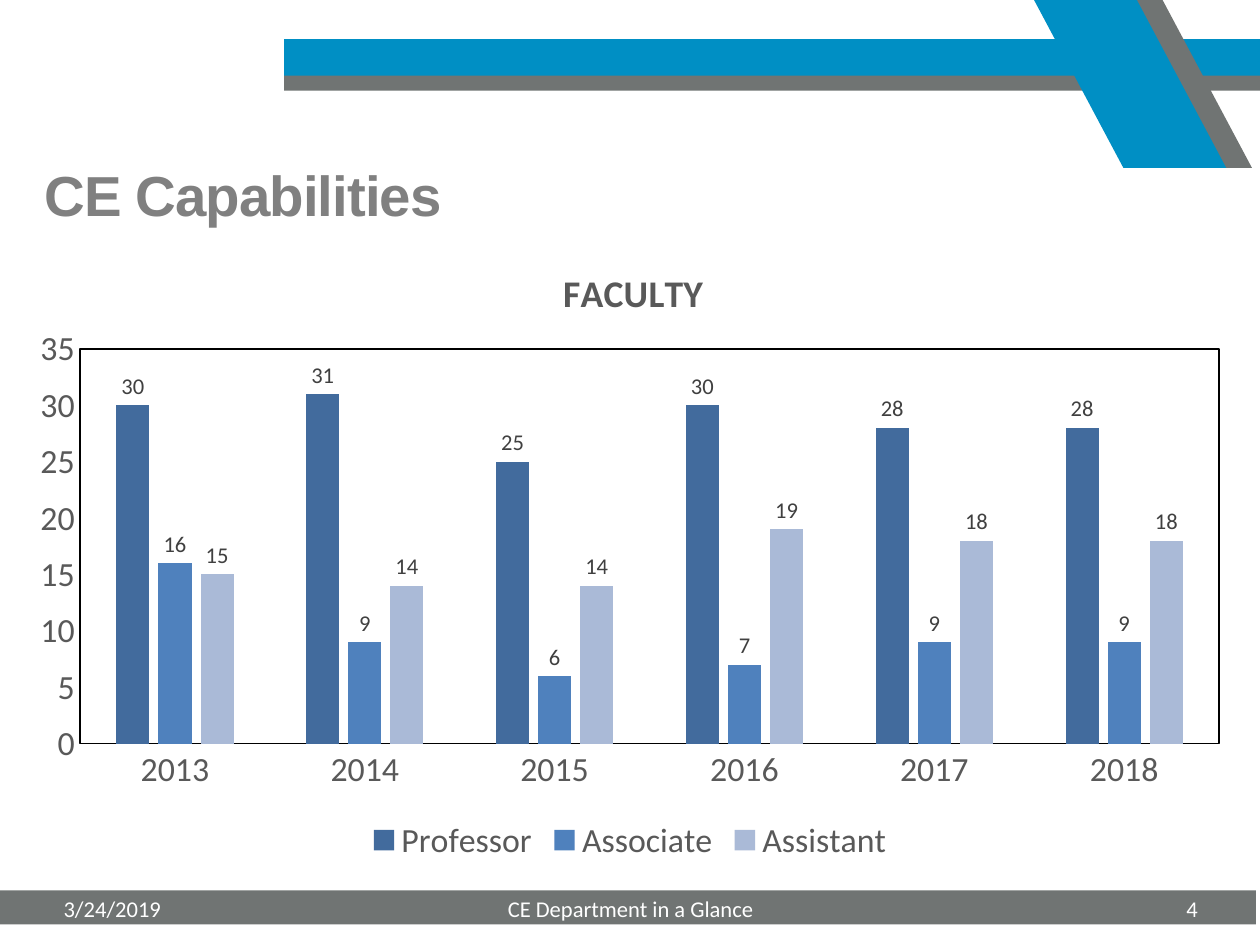
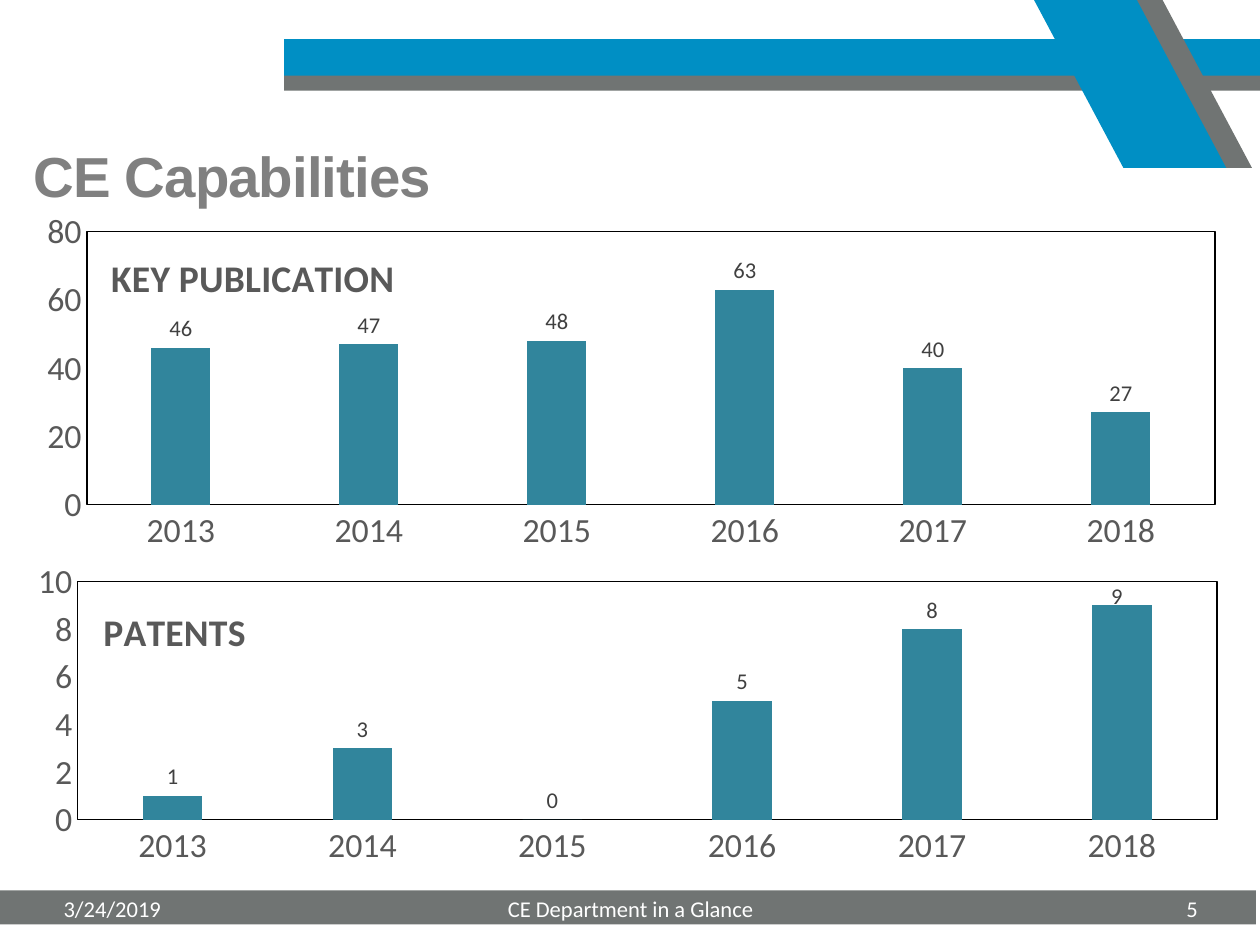
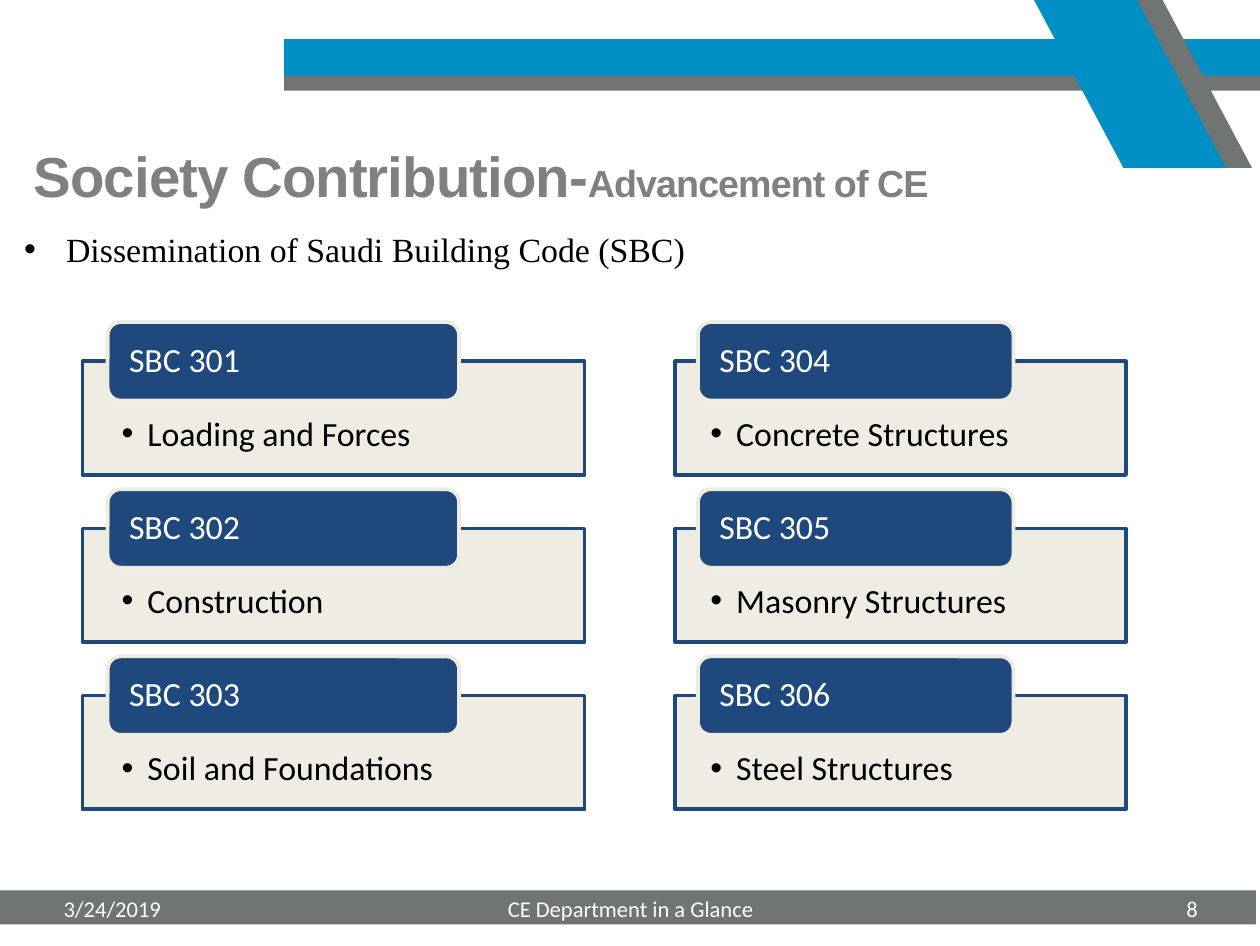
from lxml import etree
from pptx import Presentation
from pptx.chart.data import CategoryChartData
from pptx.dml.color import RGBColor
from pptx.enum.chart import XL_CHART_TYPE, XL_LABEL_POSITION, XL_LEGEND_POSITION, XL_TICK_MARK
from pptx.enum.shapes import MSO_SHAPE
from pptx.enum.text import MSO_ANCHOR, PP_ALIGN
from pptx.oxml import parse_xml
from pptx.oxml.ns import nsdecls, qn
from pptx.util import Inches, Pt

COLUMN = XL_CHART_TYPE.COLUMN_CLUSTERED
OUTSIDE = XL_LABEL_POSITION.OUTSIDE_END
BOTTOM = XL_LEGEND_POSITION.BOTTOM
NO_TICK = XL_TICK_MARK.NONE
RECT, ROUND = MSO_SHAPE.RECTANGLE, MSO_SHAPE.ROUNDED_RECTANGLE
TOP, MIDDLE = MSO_ANCHOR.TOP, MSO_ANCHOR.MIDDLE
LEFT, CENTER, RIGHT = PP_ALIGN.LEFT, PP_ALIGN.CENTER, PP_ALIGN.RIGHT
JUSTIFY = PP_ALIGN.JUSTIFY

COLORS = {
    "blue": "008FC4", "gray": "707473", "title": "808080", "white": "FFFFFF",
    "black": "000000", "axis": "595959", "label": "404040", "navy": "1F497D",
    "cream": "EEECE1", "teal": "31859C",
    "dark": "426B9D", "mid": "4F81BD", "pale": "AABAD7",
}
YEARS = ["2013", "2014", "2015", "2016", "2017", "2018"]


def rgb(name):
    return RGBColor.from_string(COLORS[name])


def style(font, size, color, face="Calibri", bold=False):
    font.size, font.name, font.bold = Pt(size), face, bold
    font.color.rgb = rgb(color)


# Shapes and text
def paint(shape, fill, line=None):
    shape.shadow.inherit = False
    shape.fill.solid()
    shape.fill.fore_color.rgb = rgb(fill)
    if line:
        shape.line.color.rgb = rgb(line)
        shape.line.width = Pt(2)
    else:
        shape.line.fill.background()
    return shape


def block(slide, kind, box, fill, line=None):
    return paint(slide.shapes.add_shape(kind, *map(Inches, box)), fill, line)


def slant(slide, fill, points):
    points = [(Inches(x), Inches(y)) for x, y in points]
    pen = slide.shapes.build_freeform(*points[0], scale=1.0)
    pen.add_line_segments(points[1:], close=True)
    paint(pen.convert_to_shape(), fill)


def setup(shape, pads=(0, 0, 0, 0), align=LEFT, anchor=TOP):
    frame = shape.text_frame
    frame.word_wrap = True
    frame.vertical_anchor = anchor
    (frame.margin_left, frame.margin_top,
     frame.margin_right, frame.margin_bottom) = map(Inches, pads)
    para = frame.paragraphs[0]
    para.alignment = align
    return para


def bullet(para, indent):
    props = para._p.get_or_add_pPr()
    props.set("marL", str(Inches(indent)))
    props.set("indent", str(-Inches(indent)))
    etree.SubElement(props, qn("a:buFont")).set("typeface", "Arial")
    etree.SubElement(props, qn("a:buChar")).set("char", "•")


def label(slide, box, text, align=LEFT):
    para = setup(slide.shapes.add_textbox(*map(Inches, box)), align=align)
    para.text = text
    style(para.font, 12, "white")


def title(slide, left, top, parts):
    box = slide.shapes.add_textbox(*map(Inches, (left, top, 8.42, 0.52)))
    para = setup(box, (0.01, 0.02, 0, 0))
    style(para.font, 30, "title", "Arial", True)
    for text, size in parts:
        run = para.add_run()
        run.text = text
        run.font.size = Pt(size)
        run._r.get_or_add_rPr().set("spc", "-50")


# Bands, slanted ribbon and footer on every slide
def start(deck, number):
    slide = deck.slides.add_slide(deck.slide_layouts[6])
    block(slide, RECT, (-0.03, 6.58, 9.31, 0.25), "gray")
    block(slide, RECT, (2.1, 0.55, 7.21, 0.12), "gray")
    block(slide, RECT, (2.1, 0.29, 7.21, 0.27), "blue")
    for fill, left in (("gray", 7.83), ("blue", 7.64)):
        slant(slide, fill, [(left, 0), (left + 0.76, 0),
                            (left + 1.42, 1.24), (left + 0.66, 1.24)])
    label(slide, (0.47, 6.61, 2.14, 0.3), "3/24/2019")
    label(slide, (3.17, 6.61, 2.98, 0.3), "CE Department in a Glance", CENTER)
    label(slide, (6.71, 6.61, 2.14, 0.3), str(number), RIGHT)
    return slide


# Charts
def layout(x, y, size=None, target=False):
    vals = [("xMode", "edge"), ("yMode", "edge"), ("x", x), ("y", y)]
    if size:
        vals += [("w", size[0]), ("h", size[1])]
    if target:
        vals.insert(0, ("layoutTarget", "inner"))
    body = "".join(f'<c:{tag} val="{val}"/>' for tag, val in vals)
    return parse_xml(f'<c:layout {nsdecls("c")}><c:manualLayout>{body}'
                     '</c:manualLayout></c:layout>')


def place(chart, spot, area):
    head = chart._chartSpace.chart.find(qn("c:title"))
    plot = chart._chartSpace.chart.plotArea
    for part in (head, plot):
        for old in part.findall(qn("c:layout")):
            part.remove(old)
    head.find(qn("c:tx")).addnext(layout(*spot))
    plot.insert(0, layout(*area[:2], area[2:], True))
    plot.append(parse_xml(
        f'<c:spPr {nsdecls("c", "a")}><a:noFill/><a:ln w="9525"><a:solidFill>'
        f'<a:srgbClr val="{COLORS["black"]}"/></a:solidFill></a:ln></c:spPr>'))


def columns(slide, box, name, series, top, step, spot, area):
    data = CategoryChartData()
    data.categories = YEARS
    for key, vals, _ in series:
        data.add_series(key, vals)
    chart = slide.shapes.add_chart(COLUMN, *map(Inches, box), data).chart
    style(chart.font, 10, "black")
    chart.has_legend = False
    chart.has_title = True
    para = chart.chart_title.text_frame.paragraphs[0]
    para.text = name
    style(para.font, 20, "axis", bold=True)
    chart.chart_title.include_in_layout = False

    for axis in (chart.category_axis, chart.value_axis):
        axis.major_tick_mark = axis.minor_tick_mark = NO_TICK
        axis.has_major_gridlines = False
        style(axis.tick_labels.font, 18, "axis")
    line = chart.category_axis.format.line
    line.color.rgb, line.width = rgb("black"), Pt(0.75)
    axis = chart.value_axis
    axis.format.line.fill.background()
    axis.minimum_scale, axis.maximum_scale, axis.major_unit = 0, top, step

    plot = chart.plots[0]
    plot.gap_width, plot.overlap, plot.vary_by_categories = 219, -27, False
    for item, (_, _, color) in zip(plot.series, series):
        item.format.fill.solid()
        item.format.fill.fore_color.rgb = rgb(color)
        tags = item.data_labels
        tags.show_value, tags.position = True, OUTSIDE
        style(tags.font, 12, "label")
    place(chart, spot, area)
    return chart


def nudge(chart, index, x, y):
    tag = chart.plots[0].series[0].points[index].data_label
    style(tag.font, 12, "label")
    tag.position = OUTSIDE
    node = chart._chartSpace.xpath(".//c:dLbl")[0]
    node.insert(1, parse_xml(
        f'<c:layout {nsdecls("c")}><c:manualLayout><c:x val="{x}"/>'
        f'<c:y val="{y}"/></c:manualLayout></c:layout>'))


# Code cards
def card(slide, left, top, width, code, topic):
    body = block(slide, RECT, (left, top, width, 0.84), "cream", "navy")
    tint = body._element.spPr.find(qn("a:solidFill"))[0]
    etree.SubElement(tint, qn("a:alpha")).set("val", "90000")
    side = width * 0.078
    tab = block(slide, ROUND, (left + width * 0.05, top - 0.29, width * 0.7, 0.58),
                "navy", "cream")
    para = setup(body, (side, 0.41, side, 0.14))
    para.line_spacing = 0.9
    bullet(para, 0.19)
    para.text = topic
    style(para.font, 18, "black")
    para = setup(tab, (0.13, 0.03, 0.13, 0.03), anchor=MIDDLE)
    para.line_spacing = 0.9
    para.text = code
    style(para.font, 18, "white")


# Slides
def faculty(deck):
    slide = start(deck, 4)
    title(slide, 0.32, 1.16, [("CE Capabilities", 30)])
    series = [("Professor", (30, 31, 25, 30, 28, 28), "dark"),
              ("Associate", (16, 9, 6, 7, 9, 9), "mid"),
              ("Assistant", (15, 14, 14, 19, 18, 18), "pale")]
    chart = columns(slide, (0.12, 1.68, 9.07, 4.73), "FACULTY", series, 35, 5,
                    (0.44, 0.05), (0.052, 0.19, 0.928, 0.617))
    chart.has_legend = True
    chart.legend.position = BOTTOM
    chart.legend.include_in_layout = False
    style(chart.legend.font, 18, "axis")


def output(deck):
    slide = start(deck, 5)
    title(slide, 0.24, 1.02, [("CE Capabilities", 30)])
    columns(slide, (0.07, 1.54, 9.23, 2.63), "KEY PUBLICATION",
            [("Series 1", (46, 47, 48, 63, 40, 27), "teal")], 80, 20,
            (0.076, 0.1), (0.062, 0.065, 0.903, 0.768))
    chart = columns(slide, (-0.1, 3.61, 9.24, 3), "PATENTS",
                    [("Series 1", (1, 3, 0, 5, 8, 9), "teal")], 10, 2,
                    (0.088, 0.27), (0.073, 0.229, 0.911, 0.587))
    nudge(chart, 5, -0.004, 0.025)


def society(deck):
    slide = start(deck, 8)
    title(slide, 0.24, 1.02,
          [("Society Contribution-", 30), ("Advancement of CE", 20)])
    box = slide.shapes.add_textbox(*map(Inches, (0.08, 1.64, 9.15, 0.79)))
    para = setup(box, (0.1, 0.05, 0.1, 0.05), JUSTIFY)
    bullet(para, 0.31)
    para.text = "Dissemination of Saudi Building Code (SBC)"
    style(para.font, 18, "black", "Times New Roman")
    groups = [
        (0.61, 3.71, 301, ("Loading and Forces", "Construction", "Soil and Foundations")),
        (4.99, 3.33, 304, ("Concrete Structures", "Masonry Structures", "Steel Structures")),
    ]
    for left, width, first, topics in groups:
        for row, topic in enumerate(topics):
            card(slide, left, 2.67 + row * 1.235, width, f"SBC {first + row}", topic)


def main():
    deck = Presentation()
    deck.slide_width, deck.slide_height = Inches(9.31), Inches(6.99)
    for build in (faculty, output, society):
        build(deck)
    deck.save("out.pptx")


if __name__ == "__main__":
    main()
